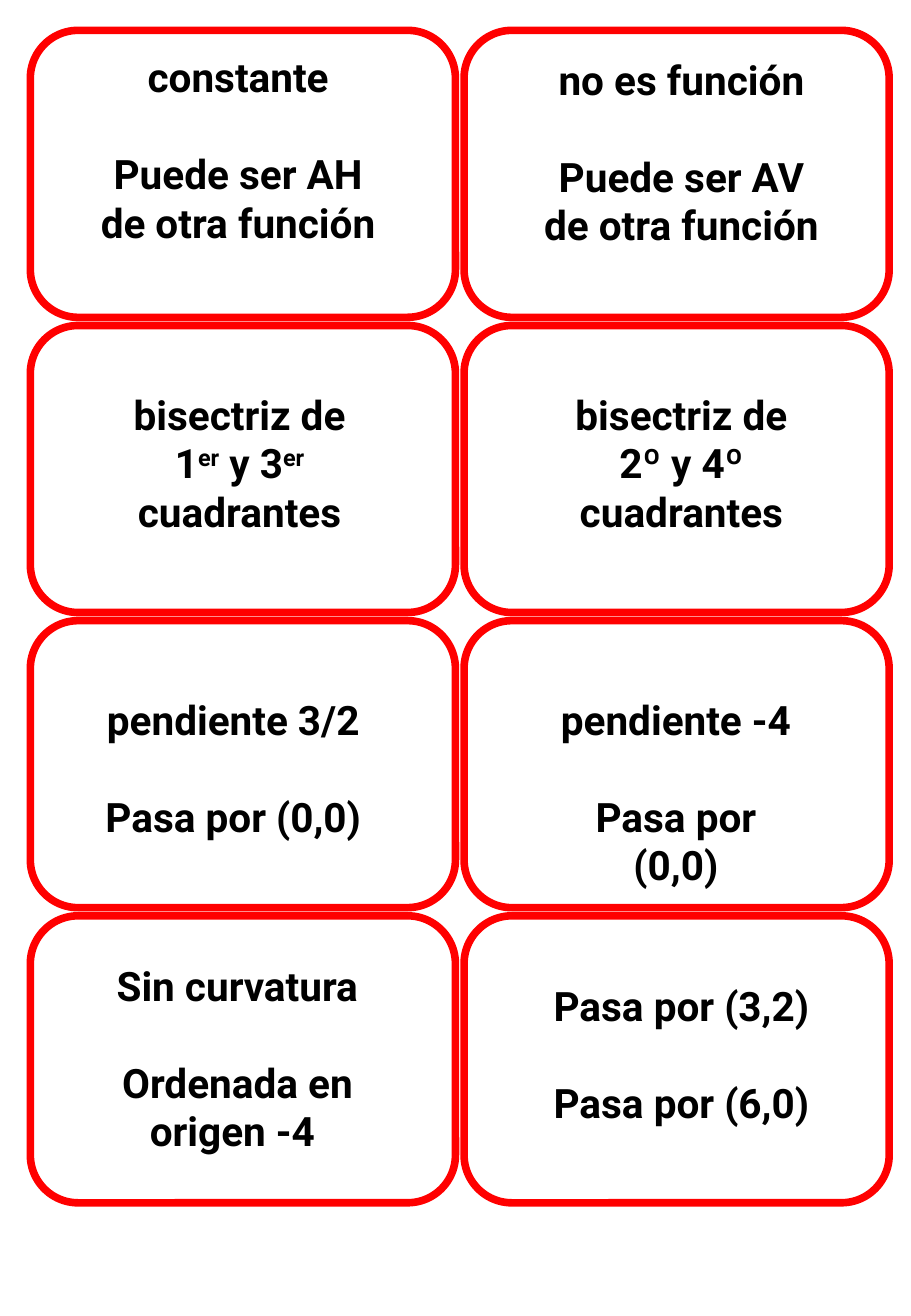
from pptx import Presentation
from pptx.dml.color import RGBColor
from pptx.enum.shapes import MSO_SHAPE
from pptx.enum.text import MSO_AUTO_SIZE, PP_ALIGN
from pptx.util import Cm, Pt

ROUNDED = MSO_SHAPE.ROUNDED_RECTANGLE
FIT_SHAPE = MSO_AUTO_SIZE.SHAPE_TO_FIT_TEXT
CENTER = PP_ALIGN.CENTER

COLORS = {"border": "FF0000", "text": "000000"}
FONT = "Roboto"
BLANK_LAYOUT = 6

# Card grid, in centimetres
COLUMNS = 2
MARGIN = 0.635
CARD_WIDTH, CARD_HEIGHT = 8.89, 6
STEP_X, STEP_Y = 9.07, 6.17
LINE_HEIGHT, INSETS = 1.03, 0.25
GAP = Pt(28.8)

# Text offset in the card (left, top), text width, lines.
# An empty line is a gap; pieces between bars are raised.
CARDS = [
    (1.12, 0.33, 6.45, ["constante", "", "Puede ser AH", "de otra función"]),
    (1.32, 0.38, 6.45, ["no es función", "", "Puede ser AV", "de otra función"]),
    (1.85, 1.22, 5.05, ["bisectriz de", "1|er| y 3|er|", "cuadrantes"]),
    (2.03, 1.22, 5.03, ["bisectriz de", "2º y 4º", "cuadrantes"]),
    (1.30, 1.42, 5.89, ["pendiente 3/2", "", "Pasa por (0,0)"]),
    (1.57, 1.42, 5.72, ["pendiente -4", "", "Pasa por (0,0)"]),
    (1.50, 0.81, 5.66, ["Sin curvatura", "", "Ordenada en", "origen -4 "]),
    (1.60, 1.24, 5.89, ["Pasa por (3,2)", "", "Pasa por (6,0) "]),
]


def add_line(para, line):
    """Write one centred line, raising every second piece."""
    para.alignment = CENTER
    para.font.name = FONT
    para.font.size = Pt(24)
    para.font.bold = True
    para.font.color.rgb = RGBColor.from_string(COLORS["text"])
    for index, piece in enumerate(line.split("|")):
        if piece:
            span = para.add_run()
            span.text = piece
            if index % 2:
                span._r.get_or_add_rPr().set("baseline", "30000")


def add_frame(page, left, top):
    """Draw the rounded outline of a card."""
    frame = page.shapes.add_shape(
        ROUNDED, Cm(left), Cm(top), Cm(CARD_WIDTH), Cm(CARD_HEIGHT))
    frame.shadow.inherit = False
    frame.fill.background()
    frame.line.color.rgb = RGBColor.from_string(COLORS["border"])
    frame.line.width = Pt(4.5)


def add_label(page, left, top, width, lines):
    """Place the text of a card."""
    height = len(lines) * LINE_HEIGHT + INSETS
    box = page.shapes.add_textbox(Cm(left), Cm(top), Cm(width), Cm(height))
    text = box.text_frame
    text.word_wrap = True
    text.auto_size = FIT_SHAPE
    para = None
    for index, line in enumerate(lines):
        if line:
            para = text.add_paragraph() if para else text.paragraphs[0]
            add_line(para, line)
            if index and not lines[index - 1]:
                para.space_before = GAP


def main():
    deck = Presentation()
    deck.slide_width, deck.slide_height = Cm(19.05), Cm(27.51)
    page = deck.slides.add_slide(deck.slide_layouts[BLANK_LAYOUT])

    for index, (offset_x, offset_y, width, lines) in enumerate(CARDS):
        row, column = divmod(index, COLUMNS)
        left = MARGIN + column * STEP_X
        top = MARGIN + row * STEP_Y
        add_frame(page, left, top)
        add_label(page, left + offset_x, top + offset_y, width, lines)

    deck.save("out.pptx")


if __name__ == "__main__":
    main()
